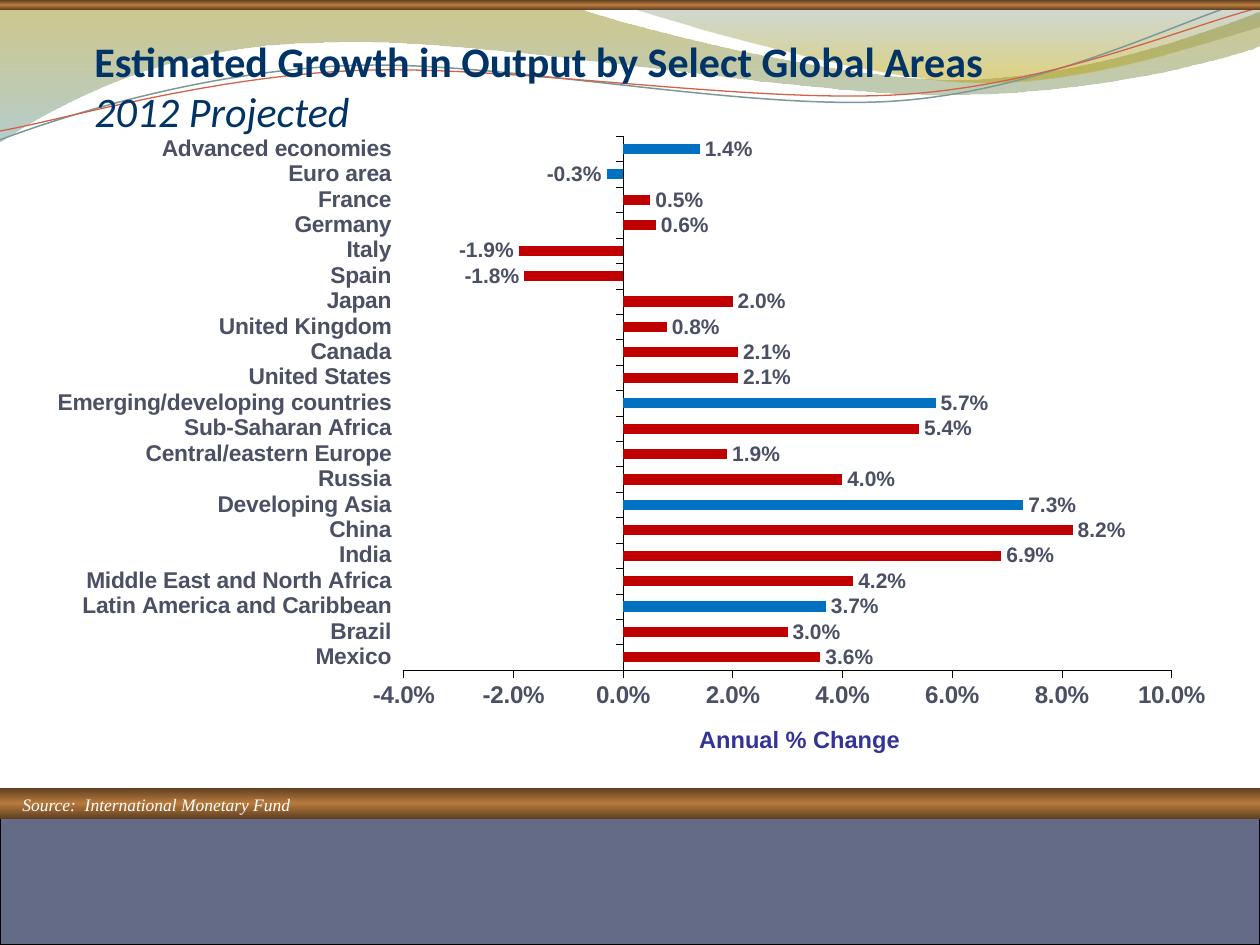
from math import cos, radians, sin
from lxml import etree
from pptx import Presentation
from pptx import util as u
from pptx.chart.data import CategoryChartData
from pptx.dml.color import RGBColor
from pptx.enum import chart as ch, shapes, text
from pptx.oxml import parse_xml
from pptx.oxml.ns import qn

PX = 9144  # 100 px to the inch
HUE = {"navy": "003366", "slate": "646B86", "ink": "4B5064", "red": "C00000",
       "blue": "0070C0", "violet": "333399", "black": "000000", "white": "FFFFFF",
       "steel": "7C999A", "rust": "D16349", "bark": "5E3E20", "bronze": "B77A3D",
       "olive": "978500", "teal": "77A5A6", "sage": "648484", "gold": "B49F00"}
RGB = {name: RGBColor.from_string(code) for name, code in HUE.items()}
BRONZE = [(0, "bark", 100), (50, "bronze", 100), (100, "bark", 100)]
NS = "http://schemas.openxmlformats.org/drawingml/2006/"


def shade(shape, stops):
    """Fill a shape with a top-to-bottom gradient of (place, colour, alpha)."""
    shape.fill.solid()
    old = shape._element.spPr.find(qn("a:solidFill"))
    gs = "".join(f'<a:gs pos="{at * 1000}"><a:srgbClr val="{HUE[hue]}">'
                 f'<a:alpha val="{alpha * 1000}"/></a:srgbClr></a:gs>'
                 for at, hue, alpha in stops)
    new = parse_xml(f'<a:gradFill xmlns:a="{NS}main" rotWithShape="1"><a:gsLst>{gs}'
                    '</a:gsLst><a:lin ang="5400000" scaled="0"/></a:gradFill>')
    old.getparent().replace(old, new)
    shape.line.fill.background()


def place(node, before, **spots):
    """Give a chart part a manual layout, ahead of its given child."""
    for old in node.findall(qn("c:layout")):
        node.remove(old)
    lay = etree.Element(qn("c:layout"))
    man = etree.SubElement(lay, qn("c:manualLayout"))
    for tag, val in spots.items():
        etree.SubElement(man, qn("c:" + tag)).set("val", str(val))
    node.find(qn(before)).addprevious(lay)


deck = Presentation()
deck.slide_width, deck.slide_height = 1000 * PX, 750 * PX
slide = deck.slides.add_slide(deck.slide_layouts[6])
parts = slide.shapes

# Waves: two numbers are a corner, six are a Bezier curve; then turn and its centre
waves = [
    ([(0, -1), (440, -1), (476, 17, 664, 63, 758, 63), (853, 63, 958, 26, 1000, 9),
      (1001, 36), (983, 44, 870, 76, 746, 75), (622, 75, 382, 28, 257, 34),
      (129, 35, 46, 83, -1, 113), (0, -1)],
     [(0, "olive", 45), (100, "teal", 55)], 0, (0, 0)),
    ([(479, -1), (509, 11, 682, 62, 769, 65), (856, 69, 961, 32, 1000, 21),
      (1000, 0), (479, -1)],
     [(0, "sage", 30), (80, "gold", 45)], 0, (0, 0)),
    ([(0, 111), (48, 93, 158, 57, 277, 52), (395, 47, 593, 89, 713, 80),
      (833, 71, 938, 15, 998, -2)], ("steel", 0.85), -2.7, (499, 57)),
    ([(0, 104), (47, 96, 164, 61, 283, 56), (403, 51, 597, 83, 717, 75),
      (836, 67, 941, 21, 1000, 6)], ("rust", 0.75), -2.7, (500, 59)),
]
for steps, look, turn, (cx, cy) in waves:
    c, s = cos(radians(-turn)), sin(radians(-turn))
    dots = [(x - cx, y - cy) for step in steps for x, y in zip(step[::2], step[1::2])]
    dots = [(round((cx + x * c - y * s) * PX), round((cy + x * s + y * c) * PX))
            for x, y in dots]
    filled = isinstance(look, list)
    pen = parts.build_freeform(*dots[0], scale=1.0)
    pen.add_line_segments(dots[1:], close=filled)
    wave = pen.convert_to_shape()
    wave.shadow.inherit = False
    wave.rotation = turn % 360
    # Join each three points of a curve into one Bezier
    legs = iter(list(wave._element.iter(qn("a:lnTo"))))
    for step in steps[1:]:
        leg = next(legs)
        if len(step) == 6:
            leg.addprevious(curve := etree.Element(qn("a:cubicBezTo")))
            for bit in (leg, next(legs), next(legs)):
                curve.append(bit[0])
                bit.getparent().remove(bit)
    if filled:
        shade(wave, look)
    else:
        wave.fill.background()
        wave.line.color.rgb = RGB[look[0]]
        wave.line.width = u.Pt(look[1])

# Bands at top and foot
for top, high, bronze in [(0, 8, True), (642, 108, False), (625, 25, True)]:
    band = parts.add_shape(shapes.MSO_SHAPE.RECTANGLE, 0, top * PX, 1000 * PX, high * PX)
    band.shadow.inherit = False
    if bronze:
        shade(band, BRONZE)
    else:
        band.fill.solid()
        band.fill.fore_color.rgb = RGB["slate"]
        band.line.color.rgb = RGB["black"]
        band.line.width = u.Pt(0.75)

# Title
box = parts.add_textbox(75 * PX, 50 * PX, 850 * PX, 58 * PX)
frame = box.text_frame
frame.word_wrap = True
frame.vertical_anchor = text.MSO_ANCHOR.BOTTOM
frame.margin_left = frame.margin_right = frame.margin_bottom = 0
frame.margin_top = 5 * PX
para = frame.paragraphs[0]
para.text = "Estimated Growth in Output by Select Global Areas\v2012 Projected"
for run, bold in zip(para.runs, (True, False)):
    run.font.name, run.font.size = "Calibri", u.Pt(24)
    run.font.bold, run.font.italic = bold, not bold
    run.font.color.rgb = RGB["navy"]

# Growth chart, rows from the foot up
rows = [("Mexico", 3.6), ("Brazil", 3.0), ("Latin America and Caribbean", 3.7),
        ("Middle East and North Africa", 4.2), ("India", 6.9), ("China", 8.2),
        ("Developing Asia", 7.3), ("Russia", 4.0), ("Central/eastern Europe", 1.9),
        ("Sub-Saharan Africa", 5.4), ("Emerging/developing countries", 5.7),
        ("United States", 2.1), ("Canada", 2.1), ("United Kingdom", 0.8),
        ("Japan", 2.0), ("Spain", -1.8), ("Italy", -1.9), ("Germany", 0.6),
        ("France", 0.5), ("Euro area", -0.3), ("Advanced economies", 1.4)]
groups = {"Latin America and Caribbean", "Developing Asia",
          "Emerging/developing countries", "Euro area", "Advanced economies"}
data = CategoryChartData(number_format="0.0%")
data.categories = [name for name, rate in rows]
data.add_series("Series 1", [round(rate / 100, 3) for name, rate in rows])
chart = parts.add_chart(ch.XL_CHART_TYPE.BAR_CLUSTERED, 25 * PX, 108 * PX,
                        975 * PX, 504 * PX, data).chart
chart.has_legend = chart.has_title = False
chart.font.name, chart.font.bold = "Arial", True
plot = chart.plots[0]
plot.vary_by_categories = False
plot.gap_width = 150
place(chart._chartSpace.chart.plotArea, "c:barChart", layoutTarget="inner",
      xMode="edge", yMode="edge", x=0.303, y=0, w=0.625, h=0.841)

# Bars and their labels
bars = plot.series[0]
bars.invert_if_negative = False
bars.format.fill.solid()
bars.format.fill.fore_color.rgb = RGB["red"]
for i, (name, rate) in enumerate(rows):
    if name in groups:
        fill = bars.points[i].format.fill
        fill.solid()
        fill.fore_color.rgb = RGB["blue"]
tags = bars.data_labels
tags.show_value = True
tags.number_format, tags.number_format_is_linked = "0.0%", False
tags.position = ch.XL_LABEL_POSITION.OUTSIDE_END
tags.font.size = u.Pt(12)

# Axes
cat, val = chart.category_axis, chart.value_axis
for axis, size in [(cat, 13), (val, 13.8)]:
    axis.has_major_gridlines = False
    axis.major_tick_mark = ch.XL_TICK_MARK.OUTSIDE
    axis.tick_labels.font.size = u.Pt(size)
    axis.format.line.color.rgb = RGB["black"]
    axis.format.line.width = u.Pt(0.25)
for font in (cat.tick_labels.font, val.tick_labels.font, tags.font):
    font.name, font.bold = "Arial", True
    font.color.rgb = RGB["ink"]
cat.tick_label_position = ch.XL_TICK_LABEL_POSITION.LOW
val.minimum_scale, val.maximum_scale, val.major_unit = -0.04, 0.1, 0.02
val.tick_labels.number_format = "0.0%"
val.tick_labels.number_format_is_linked = False
head = val.axis_title
head.text_frame.text = "Annual % Change"
font = head.text_frame.paragraphs[0].runs[0].font
font.name, font.size, font.bold = "Arial", u.Pt(13.5), True
font.color.rgb = RGB["violet"]
place(head._element, "c:overlay", xMode="edge", yMode="edge", x=0.54, y=0.92)

# Source line
note = parts.add_textbox(8 * PX, 625 * PX, 236 * PX, 27 * PX).text_frame
note.word_wrap = False
note.text = "Source:  International Monetary Fund"
font = note.paragraphs[0].runs[0].font
font.name, font.size, font.italic = "Times New Roman", u.Pt(10), True
font.color.rgb = RGB["white"]

deck.save("out.pptx")
